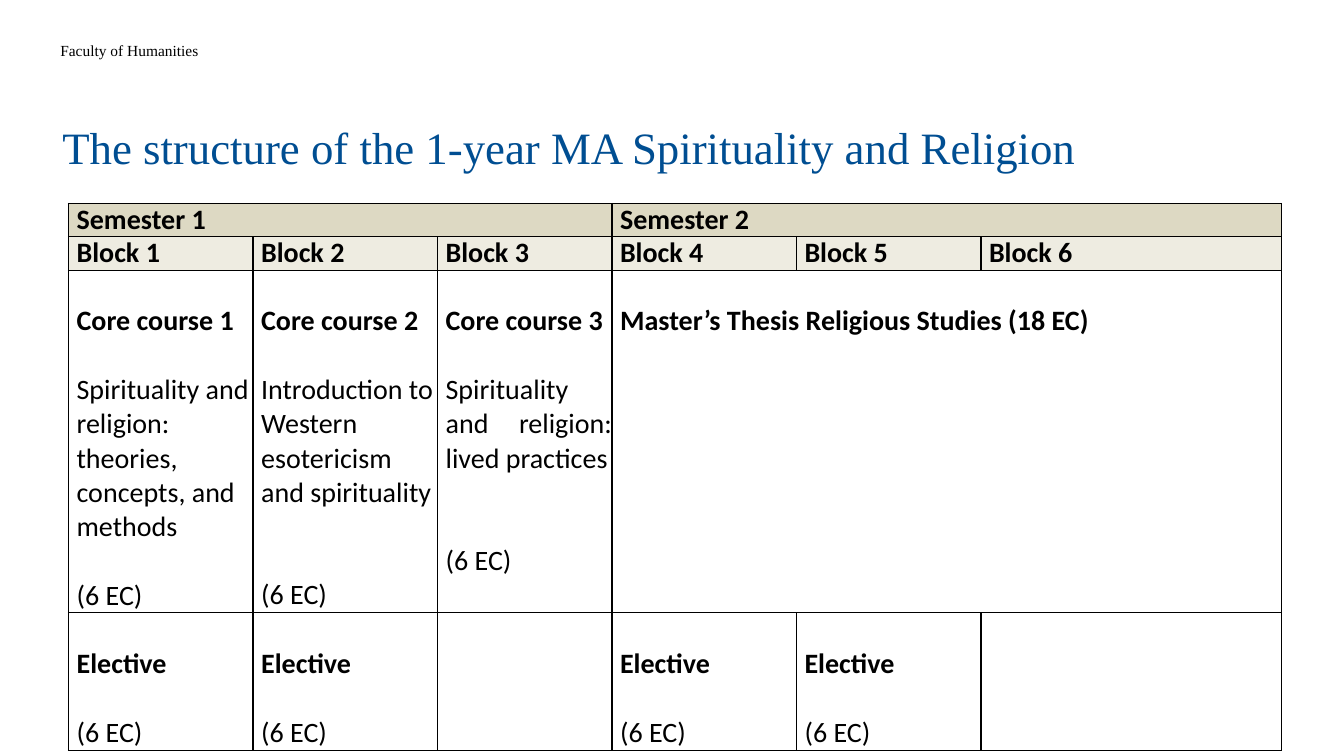
import dataclasses

import lxml.etree
import pptx
import pptx.dml.color
import pptx.enum.text
import pptx.oxml.ns
import pptx.util

HUES = {"ink": "000000", "blue": "004E92", "sand": "DDD9C3", "pale": "EEECE1"}
WIDE = pptx.util.Inches(13.33)
HIGH = pptx.util.Inches(7.5)
COLS = (13.73, 13.73, 12.98, 13.73, 13.73, 22.36)  # percent of slide width
ROWS = (4.4, 4.4, 9.07, 36.27, 18.2)  # percent of slide height
CORE, TOPIC, LAST = 2, 3, 4
LINE = pptx.util.Pt(24.4)  # one line of 20 pt Calibri
LEFT = pptx.enum.text.PP_ALIGN.LEFT
JUST = pptx.enum.text.PP_ALIGN.JUSTIFY


@dataclasses.dataclass(frozen=True)
class Label:
    text: str
    area: tuple[float, float, float, float]
    size: int
    hue: str
    space: float = 1.0
    anchor: pptx.enum.text.MSO_ANCHOR = pptx.enum.text.MSO_ANCHOR.TOP


@dataclasses.dataclass(frozen=True)
class Entry:
    """Cell content; gap counts the free lines above its last paragraph."""
    row: int
    col: int
    lines: tuple[str, ...]
    bold: bool = False
    gap: int = 0
    hue: str = ""
    align: pptx.enum.text.PP_ALIGN = LEFT
    down: int = 1
    across: int = 1


LABELS = (
    Label("Faculty of Humanities", (3.75, 4.8, 21, 3.87), 11, "ink"),
    Label("The structure of the 1-year MA Spirituality and Religion",
          (3.9, 10.13, 91.5, 13.6), 32, "blue", 0.9,
          pptx.enum.text.MSO_ANCHOR.BOTTOM),
)
TOPICS = (
    ("Spirituality and religion: theories, concepts, and methods", 1, LEFT),
    ("Introduction to Western esotericism and spirituality", 2, LEFT),
    ("Spirituality and religion: lived practices", 2, JUST),
)
ENTRIES = (
    *(Entry(0, 3 * n, (f"Semester {n + 1}",), True, hue="sand", across=3)
      for n in range(2)),
    *(Entry(1, n, (f"Block {n + 1}",), True, hue="pale") for n in range(6)),
    *(Entry(CORE, n, (f"Core course {n + 1}",), True) for n in range(3)),
    Entry(CORE, 3, ("Master’s Thesis Religious Studies (18 EC)",), True,
          down=2, across=3),
    *(Entry(TOPIC, n, (text, "(6 EC)"), gap=gap, align=align)
      for n, (text, gap, align) in enumerate(TOPICS)),
    *(Entry(LAST, n, ("Elective", "(6 EC)"), gap=1) for n in (0, 1, 3, 4)),
)


def share(part: float, whole: int) -> int:
    """Turn a percentage of a length into EMU."""
    return round(whole * part / 100)


def tint(hue: str) -> pptx.dml.color.RGBColor:
    return pptx.dml.color.RGBColor.from_string(HUES[hue])


def style(para, face: str, size: int, hue: str, bold: bool = False) -> None:
    for run in para.runs:
        run.font.name = face
        run.font.size = pptx.util.Pt(size)
        run.font.bold = bold
        run.font.color.rgb = tint(hue)


def write(slide, label: Label) -> None:
    left, top, width, height = label.area
    box = slide.shapes.add_textbox(share(left, WIDE), share(top, HIGH),
                                   share(width, WIDE), share(height, HIGH))
    frame = box.text_frame
    frame.word_wrap = True
    frame.vertical_anchor = label.anchor
    frame.text = label.text
    para = frame.paragraphs[0]
    para.line_spacing = label.space
    style(para, "Times New Roman", label.size, label.hue)


def edge(cell, row: int, col: int) -> None:
    """Rule a cell, leaving core courses open towards their topics."""
    props = cell._tc.get_or_add_tcPr()
    name = pptx.oxml.ns.qn
    for side in "LRTB":
        line = lxml.etree.SubElement(props, name(f"a:ln{side}"), w="12700")
        if col < 3 and (row, side) in ((CORE, "B"), (TOPIC, "T")):
            lxml.etree.SubElement(line, name("a:noFill"))
        else:
            fill = lxml.etree.SubElement(line, name("a:solidFill"))
            lxml.etree.SubElement(fill, name("a:srgbClr"), val=HUES["ink"])


def enter(table, entry: Entry) -> None:
    cell = table.cell(entry.row, entry.col)
    if entry.down * entry.across > 1:
        cell.merge(table.cell(entry.row + entry.down - 1,
                              entry.col + entry.across - 1))
    cell.text_frame.text = "\n".join(entry.lines)
    paras = cell.text_frame.paragraphs
    for n, para in enumerate(paras):
        para.alignment = entry.align
        heavy = entry.bold or (entry.row == LAST and n == 0)
        style(para, "Calibri", 20, "ink", heavy)
    if entry.gap:
        paras[-1].space_before = entry.gap * LINE
    if entry.hue:
        cell.fill.solid()
        cell.fill.fore_color.rgb = tint(entry.hue)
        cell.vertical_anchor = pptx.enum.text.MSO_ANCHOR.BOTTOM
        paras[0].line_spacing = pptx.util.Pt(9.9)
    else:
        cell.margin_top = LINE


def plan(slide) -> None:
    """Draw the timetable of semesters and blocks."""
    frame = slide.shapes.add_table(
        len(ROWS), len(COLS), share(5.1, WIDE), share(26.93, HIGH),
        share(sum(COLS), WIDE), share(sum(ROWS), HIGH))
    table = frame.table
    table.first_row = table.horz_banding = False
    for col, part in zip(table.columns, COLS):
        col.width = share(part, WIDE)
    for row, part in zip(table.rows, ROWS):
        row.height = share(part, HIGH)
    for row in range(len(ROWS)):
        for col in range(len(COLS)):
            cell = table.cell(row, col)
            cell.margin_left = pptx.util.Inches(0.08)
            cell.margin_right = cell.margin_top = cell.margin_bottom = 0
            edge(cell, row, col)
            cell.fill.background()
    for entry in ENTRIES:
        enter(table, entry)


def main() -> None:
    deck = pptx.Presentation()
    deck.slide_width, deck.slide_height = WIDE, HIGH
    slide = deck.slides.add_slide(deck.slide_layouts[6])
    for label in LABELS:
        write(slide, label)
    plan(slide)
    deck.save("out.pptx")


if __name__ == "__main__":
    main()
